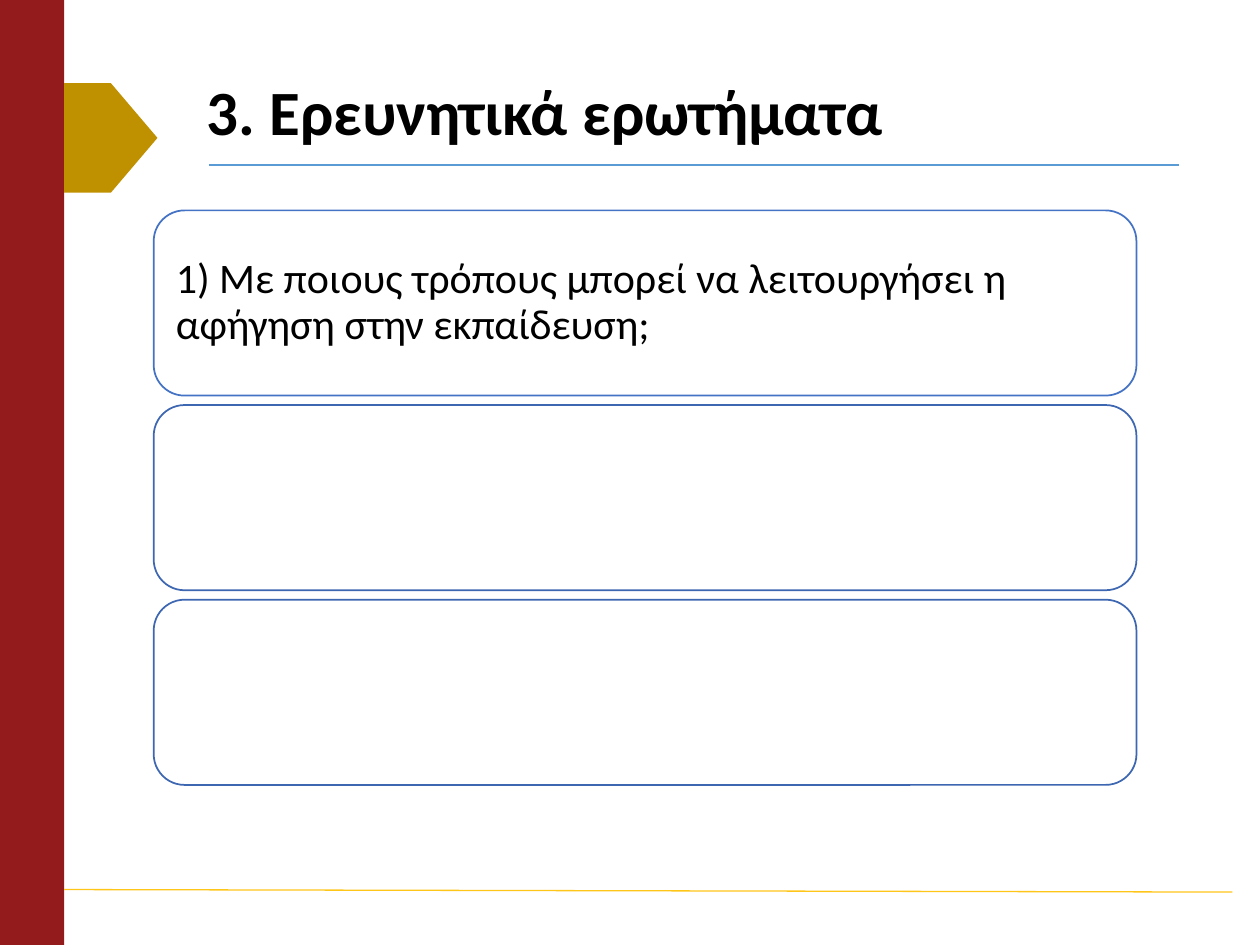
from dataclasses import dataclass

from pptx import Presentation
from pptx.dml.color import RGBColor
from pptx.enum.shapes import MSO_CONNECTOR, MSO_SHAPE
from pptx.enum.text import MSO_ANCHOR, PP_ALIGN
from pptx.oxml.ns import qn
from pptx.util import Inches, Pt
from lxml.etree import SubElement


@dataclass(frozen=True)
class Theme:
    font: str = "Calibri"
    title_size: int = 36
    question_size: int = 24
    text: str = "000000"
    paper: str = "FFFFFF"
    band: str = "931B1B"
    marker: str = "BF9000"
    title_rule: str = "5B9BD5"
    footer_rule: str = "FFC61A"
    first_card: str = "4472C4"
    later_card: str = "3E67B2"
    rule_width: float = 0.75
    card_width: float = 1
    line_spacing: float = 0.9


THEME = Theme()
COLUMNS, ROWS = 100, 75
SLIDE_WIDTH, SLIDE_HEIGHT = Inches(10), Inches(7.5)

BAND_WIDTH = 5.1
CARD_LEFT, CARD_TOP, CARD_WIDTH, CARD_HEIGHT = 12.2, 16.7, 78, 14.7
CARD_PITCH = 15.45
CARD_INSET = 1.75

TITLE = "3. Ερευνητικά ερωτήματα"
QUESTIONS = [
    "1) Με ποιους τρόπους μπορεί να λειτουργήσει η αφήγηση στην εκπαίδευση;",
    "",
    "",
]


def across(columns):
    return round(SLIDE_WIDTH * columns / COLUMNS)


def down(rows):
    return round(SLIDE_HEIGHT * rows / ROWS)


def box(left, top, width, height):
    return across(left), down(top), across(width), down(height)


def rgb(code):
    return RGBColor.from_string(code)


def add_block(slide, preset, place, fill, outline=None):
    block = slide.shapes.add_shape(preset, *box(*place))
    block.shadow.inherit = False
    block.fill.solid()
    block.fill.fore_color.rgb = rgb(fill)
    if outline:
        block.line.color.rgb = rgb(outline)
        block.line.width = Pt(THEME.card_width)
    else:
        block.line.fill.background()
    return block


def add_rule(slide, start, end, color):
    rule = slide.shapes.add_connector(
        MSO_CONNECTOR.STRAIGHT,
        across(start[0]), down(start[1]), across(end[0]), down(end[1]))
    rule.line.color.rgb = rgb(color)
    rule.line.width = Pt(THEME.rule_width)
    SubElement(rule.element.spPr, qn("a:effectLst"))


def write(frame, wording, size, bold=False):
    frame.word_wrap = True
    frame.vertical_anchor = MSO_ANCHOR.MIDDLE
    paragraph = frame.paragraphs[0]
    paragraph.alignment = PP_ALIGN.LEFT
    paragraph.line_spacing = THEME.line_spacing
    run = paragraph.add_run()
    run.text = wording
    run.font.name = THEME.font
    run.font.size = Pt(size)
    run.font.bold = bold
    run.font.color.rgb = rgb(THEME.text)


def add_title(slide):
    title = slide.shapes.add_textbox(*box(15.4, 6, 78.7, 6.3))
    write(title.text_frame, TITLE, THEME.title_size, bold=True)


def add_question_card(slide, index, question):
    outline = THEME.later_card if index else THEME.first_card
    place = (CARD_LEFT, CARD_TOP + index * CARD_PITCH, CARD_WIDTH, CARD_HEIGHT)
    card = add_block(slide, MSO_SHAPE.ROUNDED_RECTANGLE, place, THEME.paper, outline)
    if question:
        frame = card.text_frame
        # The rounded corners already inset the text by 0.29 of their radius.
        corner_inset = 0.29 * card.adjustments[0] * CARD_HEIGHT
        frame.margin_left = frame.margin_right = across(CARD_INSET - corner_inset)
        write(frame, question, THEME.question_size)


def main():
    deck = Presentation()
    deck.slide_width, deck.slide_height = SLIDE_WIDTH, SLIDE_HEIGHT
    slide = deck.slides.add_slide(deck.slide_layouts[6])

    add_block(slide, MSO_SHAPE.RECTANGLE, (0, 0, BAND_WIDTH, ROWS), THEME.band)
    add_rule(slide, (16.6, 13.1), (93.6, 13.1), THEME.title_rule)
    add_rule(slide, (BAND_WIDTH, 70.6), (97.8, 70.8), THEME.footer_rule)
    add_block(slide, MSO_SHAPE.PENTAGON, (BAND_WIDTH, 6.6, 7.4, 8.7), THEME.marker)
    add_title(slide)
    for index, question in enumerate(QUESTIONS):
        add_question_card(slide, index, question)

    deck.save("out.pptx")


if __name__ == "__main__":
    main()
